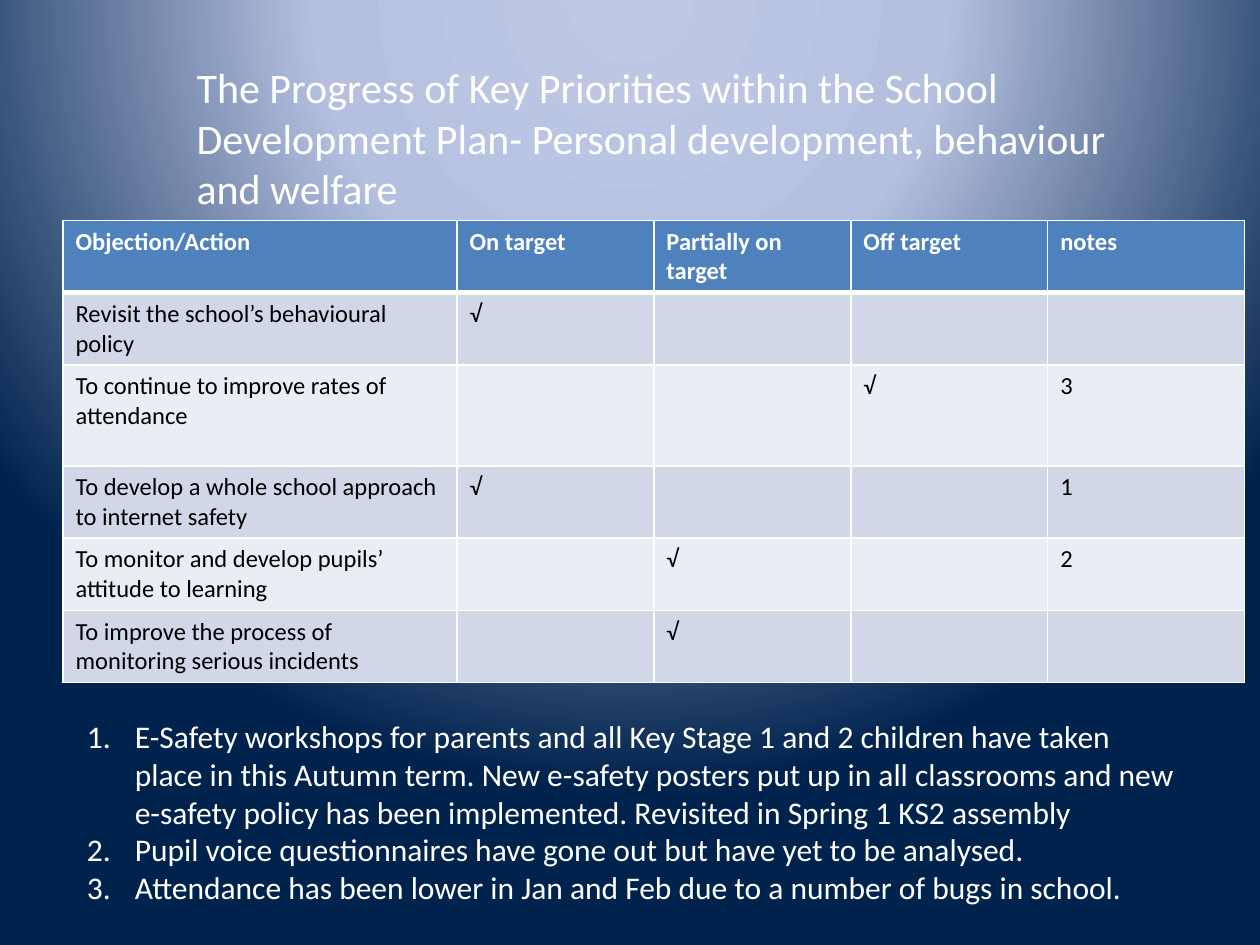
from pptx import Presentation, util as u
from pptx.dml.color import RGBColor
from pptx.enum import text
from pptx.oxml import parse_xml
from pptx.oxml.ns import nsdecls

TICK = "√"
HEADERS = ["Objection/Action", "On target", "Partially on target", "Off target", "notes"]
# objective, column of its tick, note number
OBJECTIVES = [
    ("Revisit the school’s behavioural policy", 1, ""),
    ("To continue to improve rates of attendance", 3, "3"),
    ("To develop a whole school approach to internet safety", 1, "1"),
    ("To monitor and develop pupils’ attitude to learning", 2, "2"),
    ("To improve the process of monitoring serious incidents", 2, ""),
]
NOTES = [
    "E-Safety workshops for parents and all Key Stage 1 and 2 children have taken place "
    "in this Autumn term. New e-safety posters put up in all classrooms and new e-safety "
    "policy has been implemented. Revisited in Spring 1 KS2 assembly",
    "Pupil voice questionnaires have gone out but have yet to be analysed.",
    "Attendance has been lower in Jan and Feb due to a number of bugs in school.",
]


def rgb(value):
    return RGBColor.from_string(value)


def write(p, content, size=18, color="FFFFFF", bold=False, font="Calibri"):
    p.alignment = text.PP_ALIGN.LEFT
    p.space_before = u.Pt(0)
    r = p.add_run()
    r.text = content
    r.font.size, r.font.bold, r.font.name = u.Pt(size), bold, font
    r.font.color.rgb = rgb(color)


class Deck:
    header, bands, line = "4F81BD", ("D0D8E8", "E9EDF4"), "FFFFFF"

    def __init__(self, prs):
        self.slide = prs.slides.add_slide(prs.slide_layouts[1])

    def background(self, stops):
        """Fill with a circular gradient centred above the slide."""
        self.slide.background.fill.gradient()
        old = self.slide.element.xpath(".//p:bgPr/a:gradFill")[0]
        marks = "".join(f'<a:gs pos="{pos * 1000}"><a:srgbClr val="{color}"/></a:gs>'
                        for pos, color in stops)
        old.getparent().replace(old, parse_xml(
            f'<a:gradFill {nsdecls("a")} rotWithShape="1"><a:gsLst>{marks}</a:gsLst>'
            '<a:path path="circle"><a:fillToRect l="50000" t="-80000" r="50000" b="180000"/>'
            '</a:path></a:gradFill>'))

    def place(self, sp, left, top, width, height):
        sp.left, sp.top = u.Inches(left), u.Inches(top)
        sp.width, sp.height = u.Inches(width), u.Inches(height)
        tf = sp.text_frame
        tf.word_wrap = True
        tf.auto_size = text.MSO_AUTO_SIZE.NONE
        tf.vertical_anchor = text.MSO_ANCHOR.TOP
        return tf

    def title(self, content, *box):
        tf = self.place(self.slide.shapes.title, *box)
        write(tf.paragraphs[0], content, size=24)

    def numbered_list(self, items, *box, indent=0.38):
        tf = self.place(self.slide.placeholders[1], *box)
        for i, item in enumerate(items):
            p = tf.add_paragraph() if i else tf.paragraphs[0]
            pPr = p._p.get_or_add_pPr()
            pPr.set("marL", str(u.Inches(indent)))
            pPr.set("indent", str(-u.Inches(indent)))
            for tag in ('buFont {} typeface="+mj-lt"', 'buAutoNum {} type="arabicPeriod"'):
                pPr.append(parse_xml(f'<a:{tag.format(nsdecls("a"))}/>'))
            write(p, item)

    def borders(self, cell, **widths):
        tcPr = cell._tc.get_or_add_tcPr()
        for side in "LRTB":
            tcPr.append(parse_xml(
                f'<a:ln{side} {nsdecls("a")} w="{u.Pt(widths.get(side, 1))}"><a:solidFill>'
                f'<a:srgbClr val="{self.line}"/></a:solidFill></a:ln{side}>'))

    def table(self, rows, left, top, width, heights):
        """Draw a banded table whose first column is twice as wide as the others."""
        columns = len(rows[0])
        table = self.slide.shapes.add_table(
            len(rows), columns, u.Inches(left), u.Inches(top),
            u.Inches(width), u.Inches(sum(heights))).table
        unit = width / (columns + 1)
        for j, column in enumerate(table.columns):
            column.width = u.Inches(unit if j else 2 * unit)
        for i, row in enumerate(rows):
            table.rows[i].height = u.Inches(heights[i])
            for j, content in enumerate(row):
                cell = table.cell(i, j)
                self.borders(cell, T=3 if i == 1 else 1, B=3 if i == 0 else 1)
                cell.fill.solid()
                cell.fill.fore_color.rgb = rgb(self.bands[(i - 1) % 2] if i else self.header)
                write(cell.text_frame.paragraphs[0], content, size=14,
                      color="000000" if i else "FFFFFF", bold=i == 0)


def main():
    prs = Presentation()
    prs.slide_width, prs.slide_height = u.Inches(10), u.Inches(7.5)
    deck = Deck(prs)
    deck.background([(0, "BFC9E5"), (40, "B5C0E0"), (100, "00234D")])
    deck.title("The Progress of Key Priorities within the School Development Plan- "
               "Personal development, behaviour and welfare", 1.46, 0.44, 7.73, 1.31)
    rows = [HEADERS] + [
        [objective] + [TICK if j == tick else "" for j in (1, 2, 3)] + [note]
        for objective, tick, note in OBJECTIVES]
    deck.table(rows, 0.5, 1.75, 9.38, [0.57, 0.57, 0.8, 0.57, 0.57, 0.57])
    deck.numbered_list(NOTES, 0.59, 5.64, 8.9, 1.62)
    prs.save("out.pptx")


if __name__ == "__main__":
    main()
